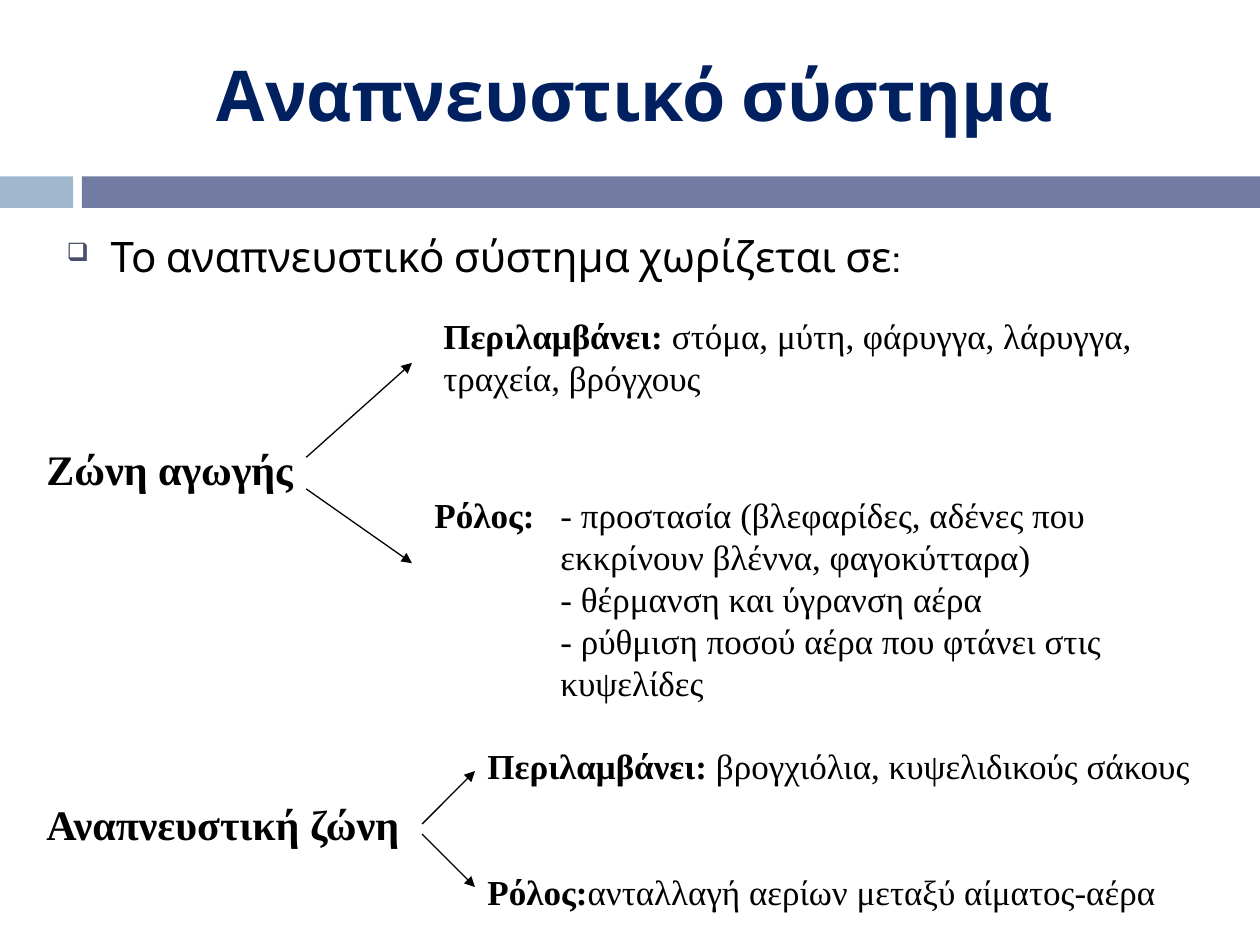
import pptx
import pptx.util
import pptx.dml.color
import pptx.enum.shapes
import pptx.enum.text
import pptx.oxml
import pptx.oxml.ns

COLUMNS, ROWS = 100, 75
CELL = pptx.util.Inches(0.1)
COLORS = {"ink": "000000", "title": "002060", "accent": "9FB8CD",
          "band": "727CA3", "bullet": "474F6D"}
SERIF = "Times New Roman"
SANS = "Cabin"


def cells(*counts):
    return [round(count * CELL) for count in counts]


def color(name):
    return pptx.dml.color.RGBColor.from_string(COLORS[name])


def add_xml(parent, markup):
    namespaces = pptx.oxml.ns.nsdecls("a")
    tag, rest = markup.split(" ", 1)
    parent.append(pptx.oxml.parse_xml(f"{tag} {namespaces} {rest}"))


def add_span(para, text, size, bold=False, font=SERIF, ink="ink"):
    span = para.add_run()
    span.text = text
    settings = {"size": pptx.util.Pt(size), "bold": bold, "name": font}
    for key, value in settings.items():
        setattr(span.font, key, value)
    span.font.color.rgb = color(ink)


def add_band(page, left, width, fill):
    band = page.shapes.add_shape(pptx.enum.shapes.MSO_SHAPE.RECTANGLE,
                                 *cells(left, 14, width, 2.5))
    band.shadow.inherit = False
    band.fill.solid()
    band.fill.fore_color.rgb = color(fill)
    band.line.fill.background()


def add_title(page, text):
    box = page.shapes.title
    places = zip(("left", "top", "width", "height"), cells(4.3, 3.6, 92.2, 11.7))
    for key, value in places:
        setattr(box, key, value)
    frame = box.text_frame
    settings = {"vertical_anchor": pptx.enum.text.MSO_ANCHOR.TOP,
                "auto_size": pptx.enum.text.MSO_AUTO_SIZE.NONE,
                "word_wrap": True}
    for key, value in settings.items():
        setattr(frame, key, value)
    para = frame.paragraphs[0]
    para.alignment = pptx.enum.text.PP_ALIGN.CENTER
    add_span(para, text, 40, True, SANS, "title")


def add_box(page, place, wrap=True, grow=True):
    box = page.shapes.add_textbox(*cells(*place))
    sizes = pptx.enum.text.MSO_AUTO_SIZE
    box.text_frame.word_wrap = wrap
    box.text_frame.auto_size = sizes.SHAPE_TO_FIT_TEXT if grow else sizes.NONE
    return box.text_frame


def add_bullet(page, text):
    para = add_box(page, (4.3, 17.8, 91.5, 55.1), grow=False).paragraphs[0]
    para.alignment = pptx.enum.text.PP_ALIGN.JUSTIFY
    para.space_after = pptx.util.Pt(18)
    indent_para(para, 3.5, -3.5)
    properties = para._p.get_or_add_pPr()
    add_xml(properties, f'<a:buClr ><a:srgbClr val="{COLORS["bullet"]}"/></a:buClr>')
    add_xml(properties, '<a:buSzPct val="60000"/>')
    add_xml(properties, '<a:buChar char="❑"/>')
    add_span(para, text, 24, font=SANS)


def indent_para(para, margin, indent):
    properties = para._p.get_or_add_pPr()
    for key, value in zip(("marL", "indent"), cells(margin, indent)):
        properties.set(key, str(value))


def add_zone(page, row, width, text):
    frame = add_box(page, (2.7, row, width, 5), wrap=False)
    add_span(frame.paragraphs[0], text, 24, True)


def add_detail(page, place, label, text):
    para = add_box(page, place).paragraphs[0]
    add_span(para, label, 20, True)
    add_span(para, text, 20)


def add_roles(page, place, label, roles):
    frame = add_box(page, place)
    for number, role in enumerate(roles):
        para = frame.add_paragraph() if number else frame.paragraphs[0]
        indent_para(para, 10, 0 if number else -10)
        if number == 0:
            add_span(para, label, 20, True)
            role = "\t" + role
        add_span(para, role, 20)


def add_arrow(page, *ends):
    arrow = page.shapes.add_connector(
        pptx.enum.shapes.MSO_CONNECTOR.STRAIGHT, *cells(*ends))
    arrow.line.color.rgb = color("ink")
    arrow.line.width = pptx.util.Pt(0.75)
    add_xml(arrow.line._get_or_add_ln(), '<a:tailEnd type="triangle"/>')
    add_xml(arrow._element.spPr, "<a:effectLst />")


def main():
    deck = pptx.Presentation()
    deck.slide_width, deck.slide_height = cells(COLUMNS, ROWS)
    page = deck.slides.add_slide(deck.slide_layouts[5])

    add_band(page, 0, 5.8, "accent")
    add_band(page, 6.5, COLUMNS - 6.5, "band")
    add_title(page, "Αναπνευστικό σύστημα")
    add_bullet(page, "Το αναπνευστικό σύστημα χωρίζεται σε:")

    add_zone(page, 34.7, 21.6, "Ζώνη αγωγής")
    add_zone(page, 62.9, 30.4, "Αναπνευστική ζώνη")

    add_detail(page, (34.2, 24.5, 58.5, 7.7), "Περιλαμβάνει:",
               " στόμα, μύτη, φάρυγγα, λάρυγγα, τραχεία, βρόγχους")
    add_roles(page, (33.5, 38.7, 55, 17.7), "Ρόλος:", [
        "- προστασία (βλεφαρίδες, αδένες που",
        "εκκρίνουν βλέννα, φαγοκύτταρα)",
        "- θέρμανση και ύγρανση αέρα",
        "- ρύθμιση ποσού αέρα που φτάνει στις κυψελίδες",
    ])
    add_detail(page, (37.7, 58.6, 60, 4.3), "Περιλαμβάνει:",
               " βρογχιόλια, κυψελιδικούς σάκους")
    add_detail(page, (37.7, 68.6, 60.2, 4.3), "Ρόλος:",
               "ανταλλαγή αερίων μεταξύ αίματος-αέρα")

    add_arrow(page, 24.3, 36.3, 32.7, 28.8)
    add_arrow(page, 24.3, 38.8, 32.7, 44.7)
    add_arrow(page, 33.5, 65.4, 37.7, 61.2)
    add_arrow(page, 33.5, 66.2, 37.7, 70.4)

    deck.save("out.pptx")


if __name__ == "__main__":
    main()
